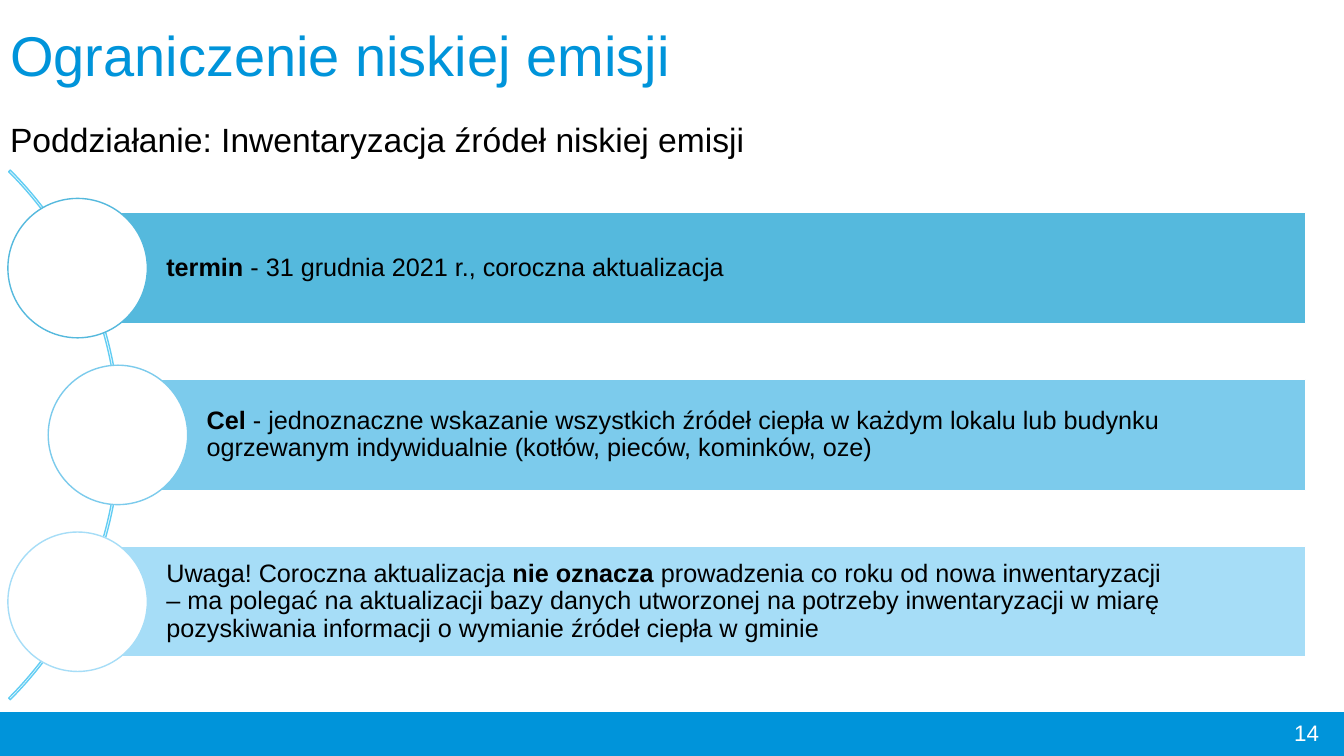
from pptx import Presentation
from pptx.dml.color import RGBColor as RGB
from pptx.enum.shapes import MSO_SHAPE as Shape
from pptx.enum.text import MSO_ANCHOR as Anchor, PP_ALIGN as Align
from pptx.util import Inches, Pt

COLORS = {
    "brand": "0094DA", "arc": "62CDF3", "white": "FFFFFF", "black": "000000",
    "deep": "55B9DD", "middle": "7CCBEC", "light": "A6DDF7",
}
COLUMNS, ROWS = 160, 90  # square cells, a twelfth of an inch


def apply(target, values):
    for name, value in values.items():
        setattr(target, name, value)


class SlideBuilder:
    """Holds the style and the current slide; lengths are grid cells."""
    font_name = "Arial"
    frame_format = {"word_wrap": True, "vertical_anchor": Anchor.MIDDLE}

    def __init__(self, deck):
        self.cell = deck.slide_height / ROWS
        self.slide = deck.slides.add_slide(deck.slide_layouts[5])

    def box(self, *cells):
        return [round(n * self.cell) for n in cells]

    def color(self, name):
        return RGB.from_string(COLORS[name])

    def shape(self, kind, box, fill, line):
        part = self.slide.shapes.add_shape(kind, *self.box(*box))
        part.shadow.inherit = False
        if fill:
            part.fill.solid()
            part.fill.fore_color.rgb = self.color(fill)
        else:
            part.fill.background()
        part.line.color.rgb = self.color(line)
        part.line.width = Pt(1)
        return part

    def text(self, paragraph, runs, size, color="black", **layout):
        """Each run is (text, bold); a newline in it is a line break."""
        apply(paragraph, {"alignment": Align.LEFT, "line_spacing": 0.9, **layout})
        for text, bold in runs:
            for i, line in enumerate(text.split("\n")):
                if i:
                    paragraph.add_line_break()
                run = paragraph.add_run()
                run.text = line
                apply(run.font, {"name": self.font_name, "size": Pt(size), "bold": bold})
                run.font.color.rgb = self.color(color)

    def title(self, box, heading, subtitle):
        title = self.slide.shapes.title
        apply(title, dict(zip(("left", "top", "width", "height"), self.box(*box))))
        apply(title.text_frame, self.frame_format)
        self.text(title.text_frame.paragraphs[0], [(heading, False)], 40, "brand",
                  space_before=Pt(0))
        self.text(title.text_frame.add_paragraph(), [(subtitle, False)], 24,
                  space_before=Pt(25))

    def arc(self, left, center, diameter):
        arc = self.shape(Shape.BLOCK_ARC, (left, center - diameter / 2, diameter, diameter),
                         None, "arc")
        for i, value in enumerate((189, 27, 0.003)):
            arc.adjustments[i] = value

    def bar(self, left, center, right, color, runs, height=13.2, diameter=16.6):
        bar = self.shape(Shape.RECTANGLE, (left, center - height / 2, right - left, height),
                         color, "white")
        apply(bar.text_frame, {**self.frame_format, "margin_left": Inches(0.88),
                               "margin_right": Inches(0.05)})
        self.text(bar.text_frame.paragraphs[0], runs, 18)
        self.shape(Shape.OVAL, (left - diameter / 2, center - diameter / 2, diameter, diameter),
                   "white", color)

    def page_number(self, box, number):
        page = self.slide.shapes.add_textbox(*self.box(*box))
        apply(page.text_frame, self.frame_format)
        self.text(page.text_frame.paragraphs[0], [(number, False)], 16, "white",
                  alignment=Align.RIGHT, line_spacing=1.0)


POINTS = [
    ("deep", 9.24, [("termin", True),
                    (" - 31 grudnia 2021 r., coroczna aktualizacja", False)]),
    ("middle", 14.04, [("Cel", True),
                       (" - jednoznaczne wskazanie wszystkich źródeł ciepła w każdym lokalu lub "
                        "budynku ogrzewanym indywidualnie (kotłów, pieców, kominków, oze)", False)]),
    ("light", 9.24, [("Uwaga! Coroczna aktualizacja ", False), ("nie oznacza ", True),
                     ("prowadzenia co roku od nowa inwentaryzacji\n"
                      "– ma polegać na aktualizacji bazy danych utworzonej na potrzeby "
                      "inwentaryzacji w miarę pozyskiwania informacji o wymianie źródeł "
                      "ciepła w gminie", False)]),
]
MIDDLE_ROW, ROW_STEP, RIGHT_EDGE = 51.78, 19.86, 155.4


def main():
    deck = Presentation()
    apply(deck, {"slide_width": Inches(13.33), "slide_height": Inches(7.5)})
    page = SlideBuilder(deck)

    # Footer band and title
    page.shape(Shape.RECTANGLE, (0, 84.84, COLUMNS, 5.16), "brand", "brand")
    page.title((0, 2.4, 124.4, 17.5), "Ograniczenie niskiej emisji",
               "Poddziałanie: Inwentaryzacja źródeł niskiej emisji")

    # Points along the arc
    page.arc(-74.88, MIDDLE_ROW, 89.16)
    for i, (color, left, runs) in enumerate(POINTS):
        page.bar(left, MIDDLE_ROW + (i - 1) * ROW_STEP, RIGHT_EDGE, color, runs)

    # Page number
    page.page_number((122.16, 84.84, 36, 4.8), "14")
    deck.save("out.pptx")


if __name__ == "__main__":
    main()
